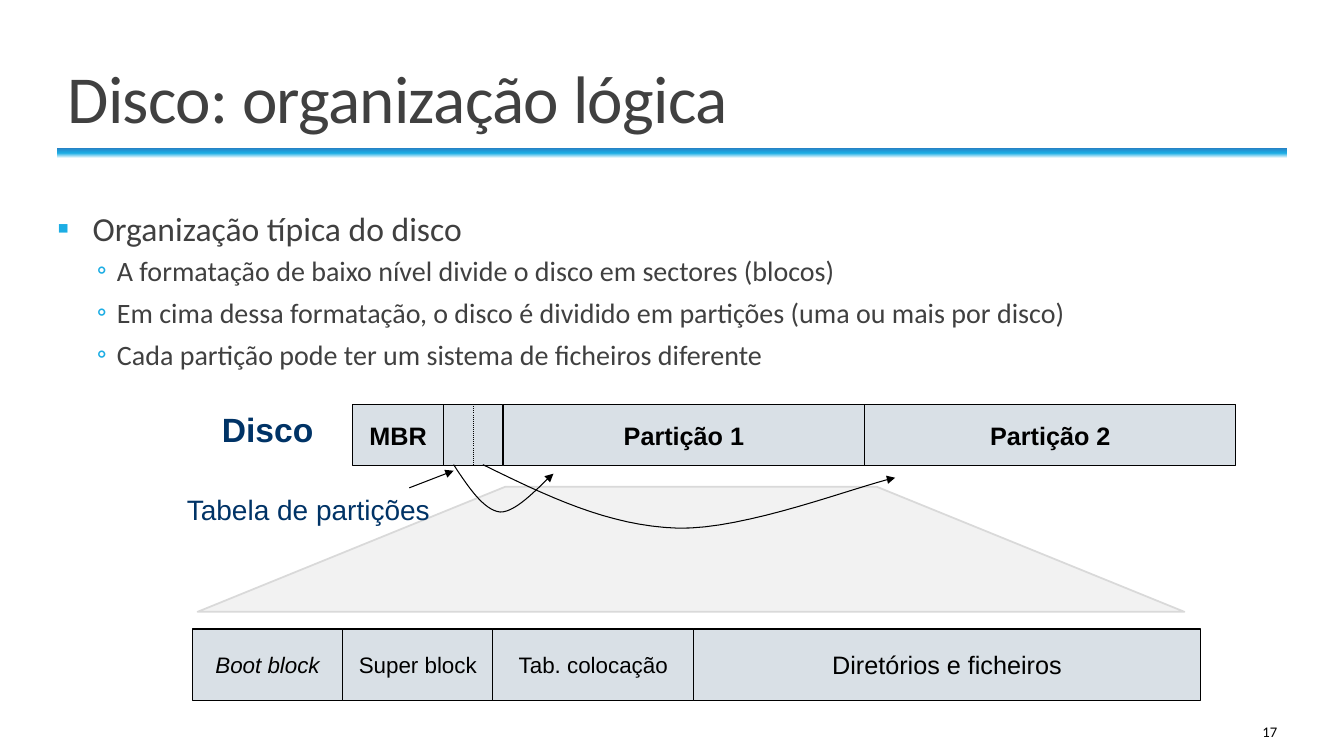
from copy import deepcopy
from dataclasses import dataclass

from lxml import etree
from pptx import Presentation
from pptx.dml.color import RGBColor
from pptx.enum.dml import MSO_LINE
from pptx.enum.shapes import MSO_CONNECTOR, MSO_SHAPE
from pptx.enum.text import MSO_ANCHOR, MSO_AUTO_SIZE, PP_ALIGN
from pptx.oxml.ns import qn
from pptx.util import Inches, Pt

STRAIGHT = MSO_CONNECTOR.STRAIGHT
RECTANGLE, TRAPEZOID = MSO_SHAPE.RECTANGLE, MSO_SHAPE.TRAPEZOID
LEFT, CENTER, RIGHT = PP_ALIGN.LEFT, PP_ALIGN.CENTER, PP_ALIGN.RIGHT
TOP, MIDDLE, BOTTOM = MSO_ANCHOR.TOP, MSO_ANCHOR.MIDDLE, MSO_ANCHOR.BOTTOM
DOTTED = MSO_LINE.ROUND_DOT
TOP_SIDE, BOTTOM_SIDE = 0, 2

BLACK = RGBColor(0x00, 0x00, 0x00)
WHITE = RGBColor(0xFF, 0xFF, 0xFF)
DARK_GREY = RGBColor(0x40, 0x40, 0x40)
NAVY = RGBColor(0x00, 0x33, 0x66)
CYAN = RGBColor(0x1C, 0xAD, 0xE4)
BLUE = RGBColor(0x26, 0x83, 0xC6)
BLOCK_FILL = RGBColor(0xD9, 0xE0, 0xE6)
ZOOM_FILL = RGBColor(0xF2, 0xF2, 0xF2)
ZOOM_LINE = RGBColor(0xD9, 0xD9, 0xD9)

CELL = Inches(0.1)  # side of one grid cell: columns and rows are equal
COLUMNS, ROWS = 133.33, 75
MARGIN, CONTENT_WIDTH = 5.7, 122
CURVE_STEPS = 16

Point = tuple[float, float]


@dataclass(frozen=True)
class Style:
    size: float
    color: RGBColor = BLACK
    font: str = "Arial"
    bold: bool = False
    italic: bool = False


@dataclass(frozen=True)
class Block:
    width: float
    label: str = ""
    style: Style = Style(18, bold=True)


@dataclass(frozen=True)
class Strip:
    left: float
    top: float
    height: float
    blocks: tuple[Block, ...]


@dataclass(frozen=True)
class Level:
    style: Style
    bullet: str
    margin: float
    hanging: float
    before: float
    after: float


@dataclass(frozen=True)
class Label:
    text: str
    area: tuple[float, float, float, float]
    style: Style
    align: PP_ALIGN = CENTER
    anchor: MSO_ANCHOR = TOP


DISK = Strip(35, 40.1, 6.1, (
    Block(9, "MBR"), Block(5.9), Block(35.9, "Partição 1"), Block(36.8, "Partição 2")))
PARTITION = Strip(19.1, 62.4, 7.1, (
    Block(14.9, "Boot block", Style(16, italic=True)),
    Block(14.9, "Super block", Style(16)),
    Block(19.9, "Tab. colocação", Style(16)),
    Block(50.3, "Diretórios e ficheiros", Style(18))))

TOPIC = Level(Style(24, DARK_GREY, "Calibri"), "▪", 3.5, 3.5, 12, 2)
DETAIL = Level(Style(20, DARK_GREY, "Calibri"), "◦", 5.9, 2, 2, 4)
BODY = (
    (TOPIC, "Organização típica do disco"),
    (DETAIL, "A formatação de baixo nível divide o disco em sectores (blocos)"),
    (DETAIL, "Em cima dessa formatação, o disco é dividido em partições (uma ou mais por disco)"),
    (DETAIL, "Cada partição pode ter um sistema de ficheiros diferente"),
)
LABELS = (
    Label("Disco", (17.1, 40.1, 18.9, 6.1), Style(24, NAVY, bold=True)),
    Label("Tabela de partições", (10.7, 48.4, 39.8, 5.3), Style(20, NAVY)),
    Label("17", (108.3, 70.6, 19.4, 4), Style(10.5, font="Calibri"), RIGHT, MIDDLE),
)
# Each curve: start, control, control, joint, control, control, end
POINTER_CURVES: tuple[tuple[Point, ...], ...] = (
    ((45, 46.1), (46.5, 48.4), (48, 50.6), (49.6, 50.8), (51.3, 50.9), (54, 47.7), (54.9, 47)),
    ((47.9, 46.1), (54.2, 49.2), (60.4, 52.2), (67.2, 52.4), (73.9, 52.6), (85.1, 48.2),
     (88.8, 47.4)),
)


def cells(*values: float) -> list[int]:
    return [round(value * CELL) for value in values]


def format_text(para, style: Style, align: PP_ALIGN) -> None:
    para.alignment = align
    for span in para.runs:
        span.font.name, span.font.size = style.font, Pt(style.size)
        span.font.bold, span.font.italic = style.bold, style.italic
        span.font.color.rgb = style.color


def set_outline(shape, color: RGBColor, points: float) -> None:
    shape.line.color.rgb = color
    shape.line.width = Pt(points)


def add_arrowhead(shape) -> None:
    outline = shape.element.spPr.find(qn("a:ln"))
    etree.SubElement(outline, qn("a:tailEnd"), type="triangle")


def add_figure(page, kind, area, fill: RGBColor, line: RGBColor, points: float):
    box = page.shapes.add_shape(kind, *cells(*area))
    box.shadow.inherit = False
    box.fill.solid()
    box.fill.fore_color.rgb = fill
    set_outline(box, line, points)
    return box


def add_rule(page) -> None:
    """Draw the bar under the title, fading to white at its lower edge."""
    bar = page.shapes.add_shape(RECTANGLE, *cells(MARGIN, 14.7, CONTENT_WIDTH, 1))
    bar.shadow.inherit = False
    bar.line.fill.background()
    bar.fill.gradient()
    bar.fill.gradient_angle = 90
    stops = bar.element.spPr.find(qn("a:gradFill")).find(qn("a:gsLst"))
    stops.insert(1, deepcopy(stops[0]))
    for stop, position, color in zip(bar.fill.gradient_stops, (0, 0.5, 1), (WHITE, CYAN, BLUE)):
        stop.position = position
        stop.color.rgb = color


def place(holder, area, anchor: MSO_ANCHOR):
    holder.left, holder.top, holder.width, holder.height = cells(*area)
    frame = holder.text_frame
    frame.auto_size = MSO_AUTO_SIZE.NONE
    frame.word_wrap = True
    frame.vertical_anchor = anchor
    return frame


def add_title(page) -> None:
    frame = place(page.shapes.title, (MARGIN, 2.9, CONTENT_WIDTH, 11.2), BOTTOM)
    frame.text = "Disco: organização lógica"
    para = frame.paragraphs[0]
    para.line_spacing = 0.85
    format_text(para, Style(48, DARK_GREY, "Calibri"), LEFT)
    para.runs[0].font._element.set("spc", "-50")


def add_body(page) -> None:
    frame = place(page.placeholders[1], (MARGIN, 20.1, CONTENT_WIDTH, 48.2), TOP)
    frame.margin_left = frame.margin_right = 0
    frame.text = "\n".join(text for _, text in BODY)
    for para, (level, _) in zip(frame.paragraphs, BODY):
        para.level = 0 if level is TOPIC else 1
        para.space_before, para.space_after = Pt(level.before), Pt(level.after)
        para.line_spacing = 1.0
        format_text(para, level.style, LEFT)
        properties = para._p.get_or_add_pPr()
        margin, hanging = cells(level.margin, level.hanging)
        properties.set("marL", str(margin))
        properties.set("indent", str(-hanging))
        color = etree.SubElement(properties, qn("a:buClr"))
        etree.SubElement(color, qn("a:srgbClr"), val=str(CYAN))
        etree.SubElement(properties, qn("a:buFont"), typeface="Calibri")
        etree.SubElement(properties, qn("a:buChar"), char=level.bullet)


def add_strip(page, strip: Strip) -> list:
    """Draw the blocks side by side and return their boxes."""
    boxes, left = [], strip.left
    for block in strip.blocks:
        area = (left, strip.top, block.width, strip.height)
        box = add_figure(page, RECTANGLE, area, BLOCK_FILL, BLACK, 0.75)
        if block.label:
            frame = box.text_frame
            frame.word_wrap = False
            frame.vertical_anchor = MIDDLE
            frame.text = block.label
            format_text(frame.paragraphs[0], block.style, CENTER)
        boxes.append(box)
        left += block.width
    return boxes


def add_line(page, start: Point, end: Point):
    line = page.shapes.add_connector(STRAIGHT, *cells(*start, *end))
    set_outline(line, BLACK, 0.75)
    etree.SubElement(line.element.spPr, qn("a:effectLst"))
    return line


def bezier(p0: Point, p1: Point, p2: Point, p3: Point) -> list[Point]:
    points = []
    for step in range(1, CURVE_STEPS + 1):
        t = step / CURVE_STEPS
        weights = ((1 - t) ** 3, 3 * t * (1 - t) ** 2, 3 * t ** 2 * (1 - t), t ** 3)
        points.append(tuple(sum(w * c for w, c in zip(weights, axis))
                            for axis in zip(p0, p1, p2, p3)))
    return points


def add_pointer(page, curve: tuple[Point, ...]) -> None:
    builder = page.shapes.build_freeform(*cells(*curve[0]))
    points = bezier(*curve[:4]) + bezier(*curve[3:])
    builder.add_line_segments([cells(*point) for point in points], close=False)
    pointer = builder.convert_to_shape()
    pointer.shadow.inherit = False
    pointer.fill.background()
    set_outline(pointer, BLACK, 0.75)
    add_arrowhead(pointer)


def add_label(page, label: Label) -> None:
    frame = place(page.shapes.add_textbox(0, 0, CELL, CELL), label.area, label.anchor)
    frame.text = label.text
    format_text(frame.paragraphs[0], label.style, label.align)


def main() -> None:
    deck = Presentation()
    deck.slide_width, deck.slide_height = cells(COLUMNS, ROWS)
    page = deck.slides.add_slide(deck.slide_layouts[1])
    add_rule(page)
    add_title(page)
    add_body(page)

    zoom = add_figure(page, TRAPEZOID, (19.6, 48.3, 97.9, 12.4), ZOOM_FILL, ZOOM_LINE, 1.25)
    zoom.adjustments[0] = 2.46
    table_box = add_strip(page, DISK)[1]
    add_strip(page, PARTITION)
    for curve in POINTER_CURVES:
        add_pointer(page, curve)
    add_arrowhead(add_line(page, (40.6, 48.4), (45, 46.7)))
    divider = add_line(page, (46.9, 40.1), (46.9, 46.2))
    divider.line.dash_style = DOTTED
    divider.begin_connect(table_box, TOP_SIDE)
    divider.end_connect(table_box, BOTTOM_SIDE)
    for label in LABELS:
        add_label(page, label)
    deck.save("out.pptx")


if __name__ == "__main__":
    main()
